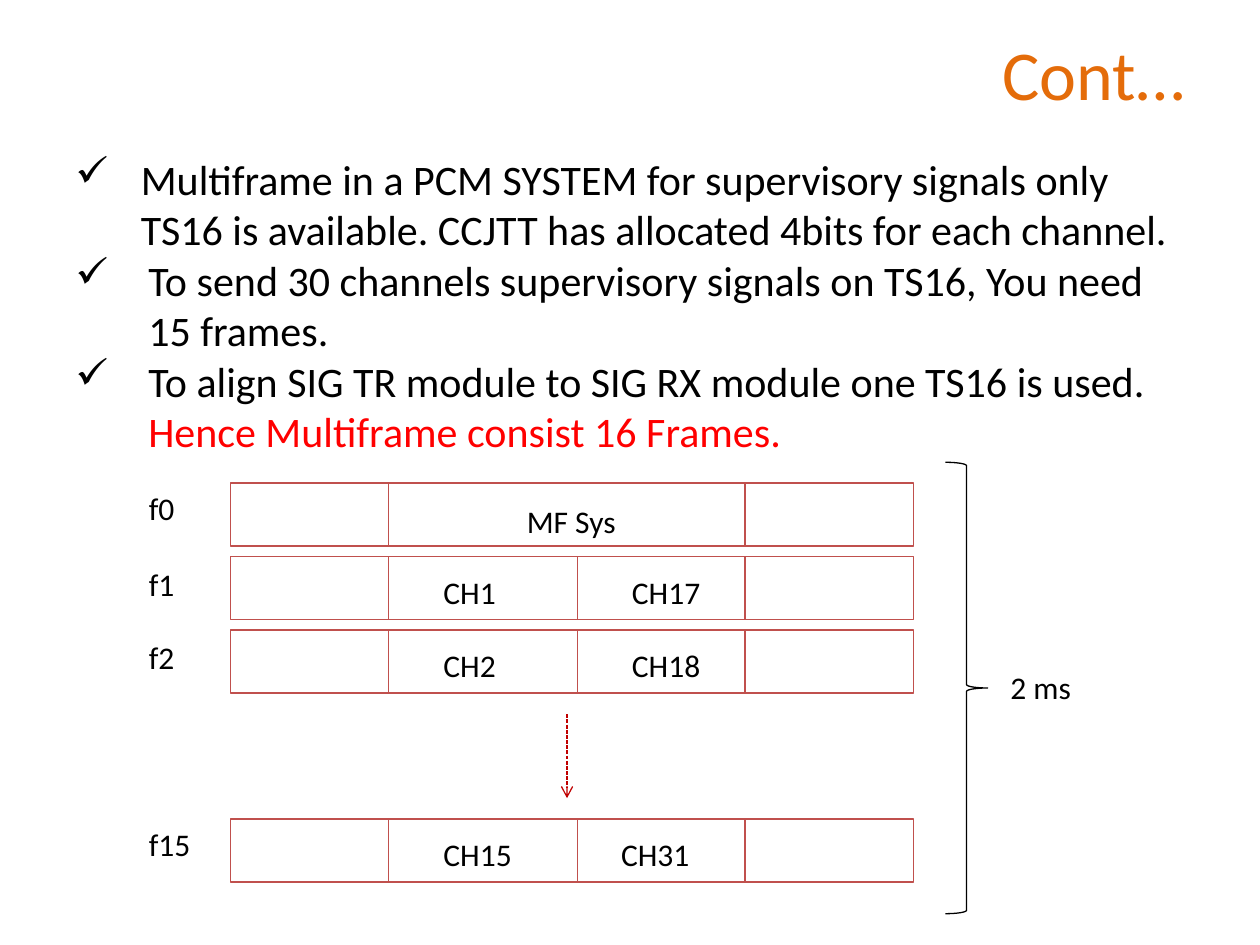
import pptx
import pptx.dml.color
import pptx.enum.dml
import pptx.enum.shapes
import pptx.enum.text
import pptx.oxml.ns
import pptx.util
from dataclasses import dataclass
from lxml import etree

Cm = pptx.util.Cm
Pt = pptx.util.Pt
qn = pptx.oxml.ns.qn
RGB = pptx.dml.color.RGBColor.from_string
SHAPE = pptx.enum.shapes.MSO_SHAPE
ALIGN = pptx.enum.text.PP_ALIGN
ANCHOR = pptx.enum.text.MSO_ANCHOR


@dataclass(frozen=True)
class Theme:
    """Colours, font and sizes of the slide."""
    font: str = "Calibri"
    title: str = "E46C0A"
    text: str = "000000"
    accent: str = "FF0000"
    frame: str = "C0504D"
    arrow: str = "C00000"
    title_pt: int = 40
    body_pt: int = 24
    label_pt: int = 18
    line_pt: float = 0.75


THEME = Theme()

BODY = [
    ("Multiframe in a PCM SYSTEM for supervisory signals only", True, 1.32, THEME.text),
    ("TS16 is available. CCJTT has allocated 4bits for each channel.", False, 1.32, THEME.text),
    ("To send 30 channels supervisory signals on TS16, You need", True, 1.47, THEME.text),
    ("15 frames.", False, 1.47, THEME.text),
    ("To align SIG TR module to SIG RX module one TS16 is used.", True, 1.47, THEME.text),
    ("Hence Multiframe consist 16 Frames.", False, 1.47, THEME.accent),
]

OUTER = (3.18, 10.37)
SPLIT = (3.18, 6.99, 10.37)
FRAMES = [
    ("f0", 0, 0, OUTER, [("MF Sys", 5.72, 0.25)]),
    ("f1", 1.48, 0.05, SPLIT, [("CH1", 4.04, 0.2), ("CH17", 7.84, 0.2)]),
    ("f2", 2.96, 0.03, SPLIT, [("CH2", 4.04, 0.2), ("CH18", 7.84, 0.2)]),
    ("f15", 6.77, 0, SPLIT, [("CH15", 4.04, 0.2), ("CH31", 7.62, 0.2)]),
]


def add_run(p, text, size, color):
    """Add one styled run to a paragraph."""
    r = p.add_run()
    r.text = text
    r.font.name = THEME.font
    r.font.size = Pt(size)
    r.font.color.rgb = RGB(color)


def add_box(s, x, y, w, h):
    """Add a wrapping text box and return its text frame."""
    tf = s.shapes.add_textbox(Cm(x), Cm(y), Cm(w), Cm(h)).text_frame
    tf.word_wrap = True
    return tf


def add_label(s, text, x, y, w=2.3):
    """Add a one-line diagram label."""
    tf = add_box(s, x, y, w, 1.02)
    add_run(tf.paragraphs[0], text, THEME.label_pt, THEME.text)


def add_outline(s, kind, x, y, w, h, color):
    """Add an unfilled preset shape."""
    sp = s.shapes.add_shape(kind, Cm(x), Cm(y), Cm(w), Cm(h))
    sp.shadow.inherit = False
    sp.fill.background()
    sp.line.color.rgb = RGB(color)
    sp.line.width = Pt(THEME.line_pt)
    return sp


def add_vertical(s, x, y, h, color):
    """Add a vertical line drawn downwards."""
    line = s.shapes.add_connector(
        pptx.enum.shapes.MSO_CONNECTOR.STRAIGHT, Cm(x), Cm(y), Cm(x), Cm(y + h))
    line.line.color.rgb = RGB(color)
    line.line.width = Pt(THEME.line_pt)
    etree.SubElement(line._element.spPr, qn("a:effectLst"))
    return line


def add_title(s, x, y, w, h):
    """Place the right-aligned title."""
    tf = add_box(s, x, y, w, h)
    tf.vertical_anchor = ANCHOR.MIDDLE
    p = tf.paragraphs[0]
    p.alignment = ALIGN.RIGHT
    add_run(p, "Cont…", THEME.title_pt, THEME.title)


def add_body(s, x, y, w, h):
    """Place the check-marked text with hanging indents."""
    tf = add_box(s, x, y, w, h)
    for i, (text, marked, indent, color) in enumerate(BODY):
        p = tf.add_paragraph() if i else tf.paragraphs[0]
        pPr = p._p.get_or_add_pPr()
        pPr.set("marL", str(Cm(indent)))
        pPr.set("indent", str(-Cm(indent) if marked else 0))
        if marked:
            etree.SubElement(pPr, qn("a:buChar")).set("char", "✓")
        else:
            etree.SubElement(pPr, qn("a:buNone"))
        add_run(p, text, THEME.body_pt, color)


def add_frame(s, x, y, w, h, name, name_dy, dividers, slots):
    """Place one frame row with its name, dividers and slot labels."""
    add_outline(s, SHAPE.RECTANGLE, x, y, w, h, THEME.frame)
    for dx in dividers:
        add_vertical(s, x + dx, y, h, THEME.frame)
    add_label(s, name, x - 1.9, y + name_dy, 1.9)
    for text, dx, dy in slots:
        add_label(s, text, x + dx, y + dy, 3.18 if len(text) > 4 else 2.3)


def add_multiframe(s, x, y, w):
    """Place the frame rows, the continuation arrow and the duration brace."""
    for name, dy, name_dy, dividers, slots in FRAMES:
        add_frame(s, x, y + dy, w, 1.27, name, name_dy, dividers, slots)
    arrow = add_vertical(s, x + 6.78, y + 4.66, 1.69, THEME.arrow)
    arrow.line.dash_style = pptx.enum.dml.MSO_LINE.SQUARE_DOT
    etree.SubElement(arrow.line._get_or_add_ln(), qn("a:tailEnd")).set("type", "arrow")
    brace = add_outline(s, SHAPE.RIGHT_BRACE, x + w + 0.64, y - 0.42, 0.85, 9.1, THEME.text)
    brace.adjustments[0] = 0.08
    brace.adjustments[1] = 0.5
    add_label(s, "2 ms", x + w + 1.7, y + 3.6)


def main():
    """Build and save the slide."""
    prs = pptx.Presentation()
    prs.slide_width, prs.slide_height = Cm(25.4), Cm(19.05)
    s = prs.slides.add_slide(prs.slide_layouts[6])
    add_title(s, 1.27, 0.2, 22.86, 2.54)
    add_body(s, 1.27, 2.97, 23.29, 6.4)
    add_multiframe(s, 4.65, 9.74, 13.77)
    prs.save("out.pptx")


if __name__ == "__main__":
    main()
